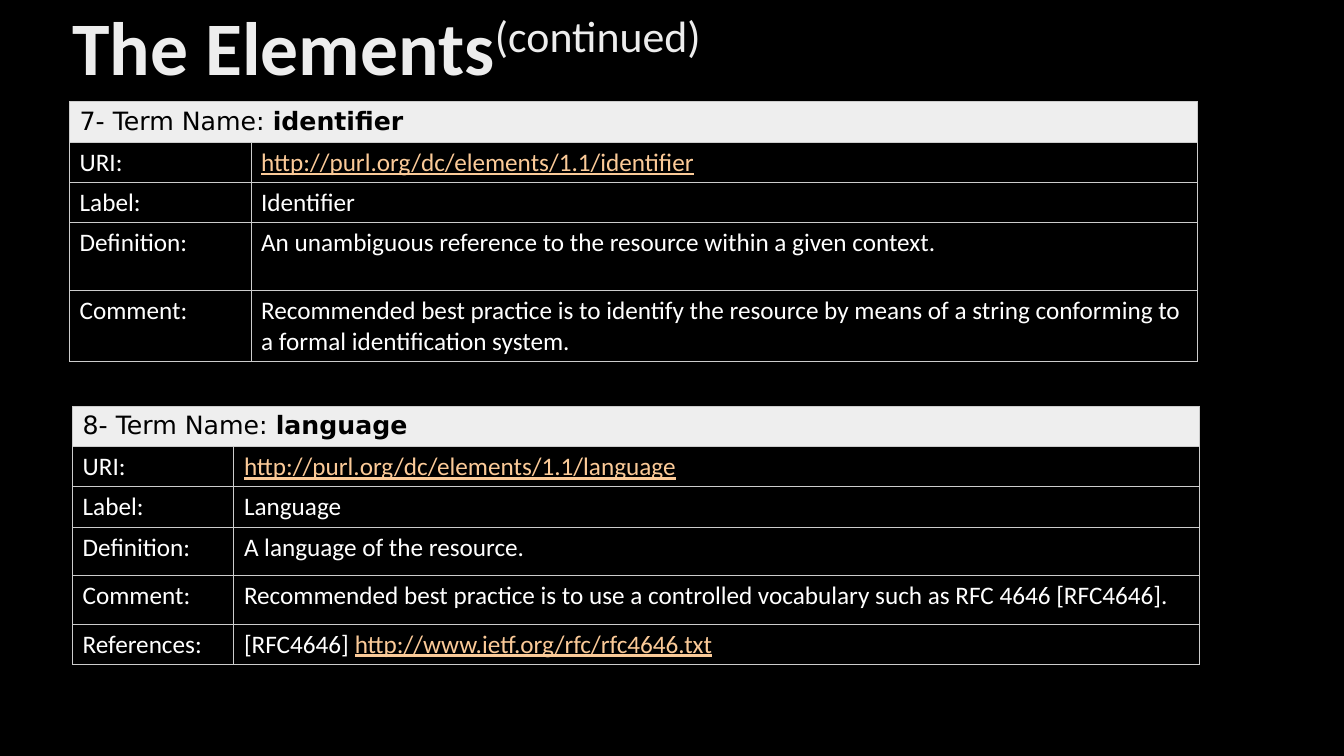
from lxml import etree
from pptx import Presentation, util as u
from pptx.dml.color import RGBColor
from pptx.enum import text
from pptx.oxml.ns import qn

COLORS = {"back": "000000", "title": "EDEDED", "band": "EEEEEE",
          "dark": "000000", "body": "FFFFFF", "link": "FBCA98", "rule": "CCCCCC"}


class ElementSlide:
    """Draws the title and the term tables in one style."""

    def __init__(self, prs):
        self.s = prs.slides.add_slide(prs.slide_layouts[6])
        fill = self.s.background.fill
        fill.solid()
        fill.fore_color.rgb = RGBColor.from_string(COLORS["back"])

    def run(self, p, words, color="body", size=18, font="Calibri", bold=False):
        r = p.add_run()
        r.text = words
        r.font.name, r.font.size, r.font.bold = font, u.Pt(size), bold
        r.font.color.rgb = RGBColor.from_string(COLORS[color])
        return r

    def title(self, words, suffix):
        sp = self.s.shapes.add_textbox(u.Inches(0.62), 0, u.Inches(11.5), u.Inches(1.01))
        tf = sp.text_frame
        tf.word_wrap = True
        tf.vertical_anchor = text.MSO_ANCHOR.MIDDLE
        p = tf.paragraphs[0]
        p.line_spacing = 0.9
        self.run(p, words, "title", 54, bold=True)
        r = self.run(p, suffix, "title", 54)
        r.font._element.set("baseline", "30000")

    def style_cell(self, cell, band):
        tcPr = cell._tc.get_or_add_tcPr()
        for side in ("lnL", "lnR", "lnT", "lnB"):
            ln = etree.SubElement(tcPr, qn(f"a:{side}"), w=str(u.Pt(0.75)))
            solid = etree.SubElement(ln, qn("a:solidFill"))
            etree.SubElement(solid, qn("a:srgbClr"), val=COLORS["rule"])
        if band:
            cell.fill.solid()
            cell.fill.fore_color.rgb = RGBColor.from_string(COLORS["band"])
        else:
            cell.fill.background()

    def term_table(self, left, top, widths, heights, number, name, rows):
        shape = self.s.shapes.add_table(len(heights), 2, u.Inches(left), u.Inches(top),
                                        u.Inches(sum(widths)), u.Inches(sum(heights)))
        table = shape.table
        for col, width in zip(table.columns, widths):
            col.width = u.Inches(width)
        for i, (row, height) in enumerate(zip(table.rows, heights)):
            row.height = u.Inches(height)
            for cell in row.cells:
                self.style_cell(cell, i == 0)
        head = table.cell(0, 0)
        head.merge(table.cell(0, 1))
        p = head.text_frame.paragraphs[0]
        self.run(p, f"{number}- Term Name: ", "dark", font="DejaVu Sans")
        self.run(p, name, "dark", font="DejaVu Sans", bold=True)
        for i, (label, plain, link) in enumerate(rows, 1):
            self.run(table.cell(i, 0).text_frame.paragraphs[0], f"{label}:")
            p = table.cell(i, 1).text_frame.paragraphs[0]
            if plain:
                self.run(p, plain)
            if link:
                self.run(p, link, "link").font.underline = True


def main():
    prs = Presentation()
    prs.slide_width, prs.slide_height = u.Inches(13.33), u.Inches(7.5)
    slide = ElementSlide(prs)
    slide.title("The Elements", "(continued)")
    slide.term_table(0.69, 1.01, [1.8, 9.39], [0.38, 0.38, 0.38, 0.67, 0.7], 7, "identifier", [
        ("URI", "", "http://purl.org/dc/elements/1.1/identifier"),
        ("Label", "Identifier", ""),
        ("Definition", "An unambiguous reference to the resource within a given context.", ""),
        ("Comment", "Recommended best practice is to identify the resource by means of "
                    "a string conforming to a formal identification system.", ""),
    ])
    slide.term_table(0.72, 4.03, [1.6, 9.58], [0.34, 0.34, 0.34, 0.48, 0.48, 0.34], 8, "language", [
        ("URI", "", "http://purl.org/dc/elements/1.1/language"),
        ("Label", "Language", ""),
        ("Definition", "A language of the resource.", ""),
        ("Comment", "Recommended best practice is to use a controlled vocabulary "
                    "such as RFC 4646 [RFC4646].", ""),
        ("References", "[RFC4646] ", "http://www.ietf.org/rfc/rfc4646.txt"),
    ])
    prs.save("out.pptx")


if __name__ == "__main__":
    main()
